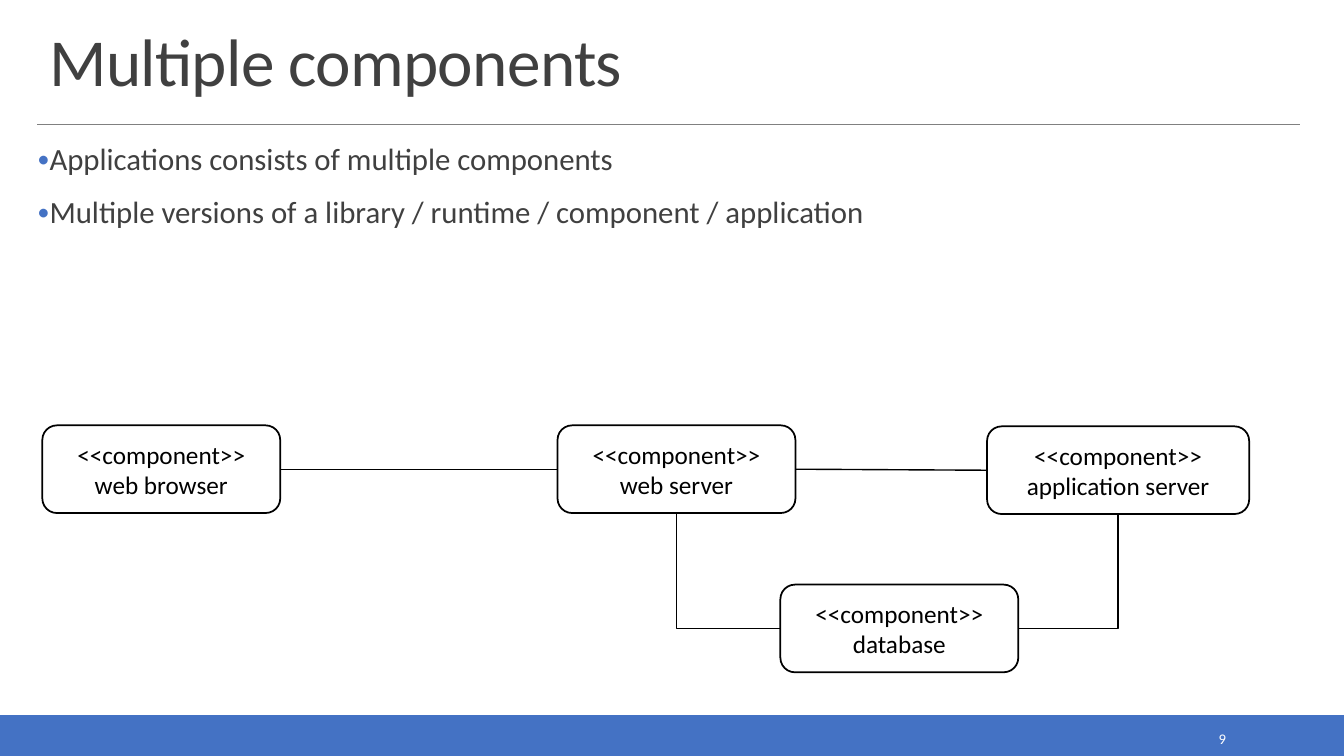
from dataclasses import dataclass

from lxml import etree
from pptx import Presentation
from pptx.dml.color import RGBColor
from pptx.enum.shapes import MSO_CONNECTOR, MSO_SHAPE
from pptx.enum.text import MSO_ANCHOR, MSO_AUTO_SIZE, PP_ALIGN
from pptx.oxml.ns import qn
from pptx.shapes.autoshape import Shape
from pptx.shapes.connector import Connector
from pptx.slide import Slide
from pptx.text.text import TextFrame
from pptx.util import Inches, Pt

STRAIGHT, ELBOW = MSO_CONNECTOR.STRAIGHT, MSO_CONNECTOR.ELBOW
RECT, ROUND = MSO_SHAPE.RECTANGLE, MSO_SHAPE.ROUNDED_RECTANGLE
TOP, MIDDLE, BOTTOM = MSO_ANCHOR.TOP, MSO_ANCHOR.MIDDLE, MSO_ANCHOR.BOTTOM
LEFT, CENTER, RIGHT = PP_ALIGN.LEFT, PP_ALIGN.CENTER, PP_ALIGN.RIGHT
NO_FIT = MSO_AUTO_SIZE.NONE

BLUE = RGBColor(0x44, 0x72, 0xC4)
GREY = RGBColor(0x80, 0x80, 0x80)
DARK = RGBColor(0x40, 0x40, 0x40)
BLACK = RGBColor(0, 0, 0)
WHITE = RGBColor(0xFF, 0xFF, 0xFF)
FONT = "Calibri"
SITE_LEFT, SITE_BOTTOM, SITE_RIGHT = 1, 2, 3


@dataclass(frozen=True)
class Part:
    name: str
    left: float
    top: float
    width: float = 2.36
    height: float = 0.87


@dataclass(frozen=True)
class Link:
    start: str
    exit: int
    end: str
    entry: int
    bent: bool = False


PARTS = [
    Part("web browser", 0.42, 4.22),
    Part("web server", 5.53, 4.22),
    Part("application server", 9.79, 4.23, 2.6),
    Part("database", 7.74, 5.8),
]
LINKS = [
    Link("web browser", SITE_RIGHT, "web server", SITE_LEFT),
    Link("web server", SITE_RIGHT, "application server", SITE_LEFT),
    Link("database", SITE_LEFT, "web server", SITE_BOTTOM, True),
    Link("database", SITE_RIGHT, "application server", SITE_BOTTOM, True),
]
POINTS = [
    "Applications consists of multiple components",
    "Multiple versions of a library / runtime / component / application",
]


def write(frame: TextFrame, lines: list[str], size: float, color: RGBColor,
          align: PP_ALIGN, anchor: MSO_ANCHOR) -> None:
    frame.word_wrap = True
    frame.auto_size = NO_FIT
    frame.vertical_anchor = anchor
    frame.text = "\n".join(lines)
    for para in frame.paragraphs:
        para.alignment = align
        para.font.name = FONT
        para.font.size = Pt(size)
        para.font.color.rgb = color


def add_bullets(frame: TextFrame) -> None:
    frame.margin_left = frame.margin_right = 0
    frame.margin_top = frame.margin_bottom = Inches(0.04)
    for para in frame.paragraphs:
        para.line_spacing = 0.9
        para.space_before = Pt(12)
        para.space_after = Pt(2)
        props = para._p.get_or_add_pPr()
        props.set("marL", str(Inches(0.1)))
        props.set("indent", str(Inches(-0.1)))
        tint = etree.Element(qn("a:buClr"))
        etree.SubElement(tint, qn("a:srgbClr"), val=str(BLUE))
        scale = etree.Element(qn("a:buSzPct"), val="80000")
        face = etree.Element(qn("a:buFont"), typeface=FONT)
        mark = etree.Element(qn("a:buChar"), char="•")
        base = props.find(qn("a:defRPr"))
        for item in (tint, scale, face, mark):
            base.addprevious(item)


def style_line(line: Connector, color: RGBColor, weight: float) -> None:
    line.line.color.rgb = color
    line.line.width = Pt(weight)
    etree.SubElement(line._element.spPr, qn("a:effectLst"))


def add_frame(slide: Slide) -> None:
    bar = slide.shapes.add_shape(RECT, 0, Inches(7.1), Inches(13.33), Inches(0.4))
    bar.shadow.inherit = False
    bar.fill.solid()
    bar.fill.fore_color.rgb = BLUE
    bar.line.color.rgb = BLUE
    bar.line.width = Pt(1.25)
    rule = slide.shapes.add_connector(
        STRAIGHT, Inches(0.37), Inches(1.23), Inches(12.89), Inches(1.23))
    style_line(rule, GREY, 0.5)
    number = slide.shapes.add_textbox(
        Inches(10.83), Inches(7.19), Inches(1.43), Inches(0.28))
    write(number.text_frame, ["9"], 10.5, WHITE, RIGHT, MIDDLE)


def add_title(slide: Slide) -> None:
    title = slide.shapes.title
    title.left, title.top = Inches(0.39), Inches(0.2)
    title.width, title.height = Inches(12.52), Inches(0.84)
    write(title.text_frame, ["Multiple components"], 48, DARK, LEFT, BOTTOM)
    para = title.text_frame.paragraphs[0]
    para.line_spacing = 0.85
    para._p.pPr.find(qn("a:defRPr")).set("spc", "-50")


def add_part(slide: Slide, part: Part) -> Shape:
    box = slide.shapes.add_shape(
        ROUND, Inches(part.left), Inches(part.top),
        Inches(part.width), Inches(part.height))
    box.shadow.inherit = False
    box.fill.background()
    box.line.color.rgb = BLACK
    box.line.width = Pt(1.25)
    write(box.text_frame, ["<<component>>", part.name], 18, BLACK, CENTER, MIDDLE)
    return box


def add_link(slide: Slide, link: Link, boxes: dict[str, Shape]) -> None:
    line = slide.shapes.add_connector(ELBOW if link.bent else STRAIGHT, 0, 0, 0, 0)
    line.begin_connect(boxes[link.start], link.exit)
    line.end_connect(boxes[link.end], link.entry)
    if link.bent:
        line._element.spPr.find(qn("a:prstGeom")).set("prst", "bentConnector2")
    style_line(line, BLACK, 1)


def main() -> None:
    deck = Presentation()
    deck.slide_width, deck.slide_height = Inches(13.33), Inches(7.5)
    slide = deck.slides.add_slide(deck.slide_layouts.get_by_name("Title Only"))
    add_frame(slide)
    add_title(slide)
    body = slide.shapes.add_textbox(
        Inches(0.37), Inches(1.39), Inches(12.52), Inches(1.34))
    write(body.text_frame, POINTS, 22, DARK, LEFT, TOP)
    add_bullets(body.text_frame)
    boxes = {part.name: add_part(slide, part) for part in PARTS}
    for link in LINKS:
        add_link(slide, link, boxes)
    deck.save("out.pptx")


if __name__ == "__main__":
    main()
